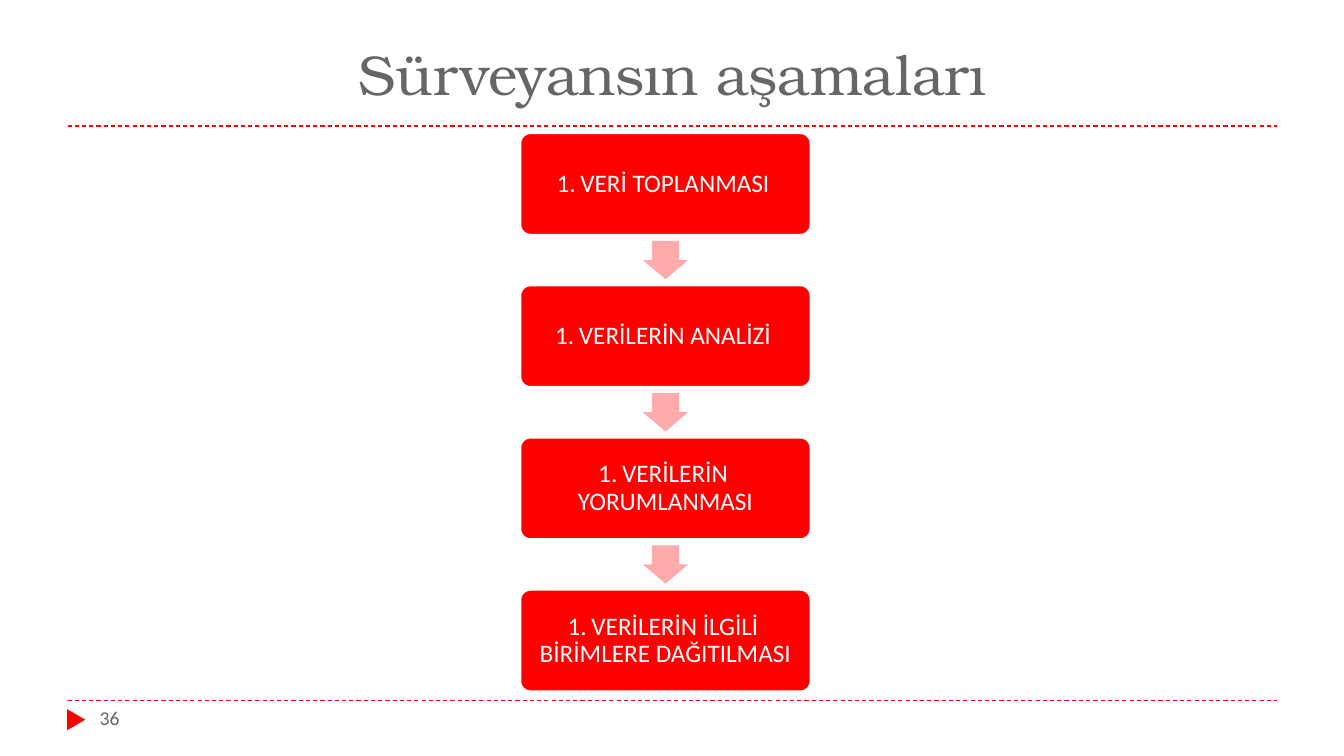
from lxml import etree
from pptx import Presentation
from pptx.dml.color import RGBColor
from pptx.enum.dml import MSO_LINE
from pptx.enum.shapes import MSO_CONNECTOR, MSO_SHAPE
from pptx.enum.text import MSO_ANCHOR, MSO_AUTO_SIZE, PP_ALIGN
from pptx.oxml.ns import qn
from pptx.util import Inches, Pt

COLORS = {"red": "FF0000", "pink": "FFABAB", "gray": "666666", "white": "FFFFFF"}
STAGES = [
    "VERİ TOPLANMASI",
    "VERİLERİN ANALİZİ",
    "VERİLERİN YORUMLANMASI",
    "VERİLERİN İLGİLİ BİRİMLERE DAĞITILMASI",
]
BOX_LEFT, BOX_TOP, BOX_WIDTH, BOX_HEIGHT = 5.16, 1.32, 2.88, 1.01
STEP = 1.51
ARROW_LENGTH, ARROW_BREADTH = 0.38, 0.45


def add_filled_shape(kind, left, top, width, height, color):
    shape = slide.shapes.add_shape(
        kind, Inches(left), Inches(top), Inches(width), Inches(height))
    shape.shadow.inherit = False
    shape.fill.solid()
    shape.fill.fore_color.rgb = RGBColor.from_string(COLORS[color])
    shape.line.fill.background()
    return shape


def style_text(paragraph, font_name, size, color):
    paragraph.font.name = font_name
    paragraph.font.size = Pt(size)
    paragraph.font.color.rgb = RGBColor.from_string(COLORS[color])


presentation = Presentation()
presentation.slide_width = Inches(13.33)
presentation.slide_height = Inches(7.5)
slide = presentation.slides.add_slide(presentation.slide_layouts[5])

# Title
title = slide.shapes.title
title.left, title.top = Inches(2.29), Inches(0.44)
title.width, title.height = Inches(8.75), Inches(0.67)
title.text_frame.text = "Sürveyansın aşamaları"
title.text_frame.auto_size = MSO_AUTO_SIZE.NONE
title.text_frame.vertical_anchor = MSO_ANCHOR.BOTTOM
title.text_frame.paragraphs[0].alignment = PP_ALIGN.CENTER
style_text(title.text_frame.paragraphs[0], "TeX Gyre Bonum", 40, "gray")

# Dashed rules
for y in (1.25, 6.95):
    rule = slide.shapes.add_connector(
        MSO_CONNECTOR.STRAIGHT, Inches(0.67), Inches(y), Inches(12.67), Inches(y))
    rule.line.color.rgb = RGBColor.from_string(COLORS["red"])
    rule.line.width = Pt(0.75)
    rule.line.dash_style = MSO_LINE.DASH
    etree.SubElement(rule.element.spPr, qn("a:effectLst"))

# Stages with arrows between them
for index, stage in enumerate(STAGES):
    top = BOX_TOP + index * STEP
    if index:
        gap_middle = top - (STEP - BOX_HEIGHT) / 2
        arrow = add_filled_shape(
            MSO_SHAPE.RIGHT_ARROW, BOX_LEFT + (BOX_WIDTH - ARROW_LENGTH) / 2,
            gap_middle - ARROW_BREADTH / 2, ARROW_LENGTH, ARROW_BREADTH, "pink")
        arrow.rotation = 90
        arrow.adjustments[0] = 0.6

    box = add_filled_shape(
        MSO_SHAPE.ROUNDED_RECTANGLE, BOX_LEFT, top, BOX_WIDTH, BOX_HEIGHT, "red")
    box.adjustments[0] = 0.1
    box.line.color.rgb = RGBColor.from_string(COLORS["white"])
    box.line.width = Pt(1.5)
    frame = box.text_frame
    frame.word_wrap = True
    frame.vertical_anchor = MSO_ANCHOR.MIDDLE
    frame.margin_left = frame.margin_right = Inches(0.07)
    frame.margin_top = frame.margin_bottom = Inches(0.07)
    frame.text = stage
    paragraph = frame.paragraphs[0]
    paragraph.alignment = PP_ALIGN.CENTER
    paragraph.line_spacing = 0.9
    style_text(paragraph, "Calibri", 18, "white")
    properties = paragraph._p.get_or_add_pPr()
    numbering = etree.Element(qn("a:buAutoNum"), type="arabicPeriod")
    properties.find(qn("a:lnSpc")).addnext(numbering)

# Page number with its marker
marker = add_filled_shape(MSO_SHAPE.ISOSCELES_TRIANGLE, 0.65, 7.05, 0.21, 0.18, "red")
marker.rotation = 90
page_number = slide.shapes.add_textbox(
    Inches(0.89), Inches(6.95), Inches(2.89), Inches(0.4))
page_number.text_frame.word_wrap = True
page_number.text_frame.text = "36"
style_text(page_number.text_frame.paragraphs[0], "Calibri", 14, "gray")

presentation.save("out.pptx")
